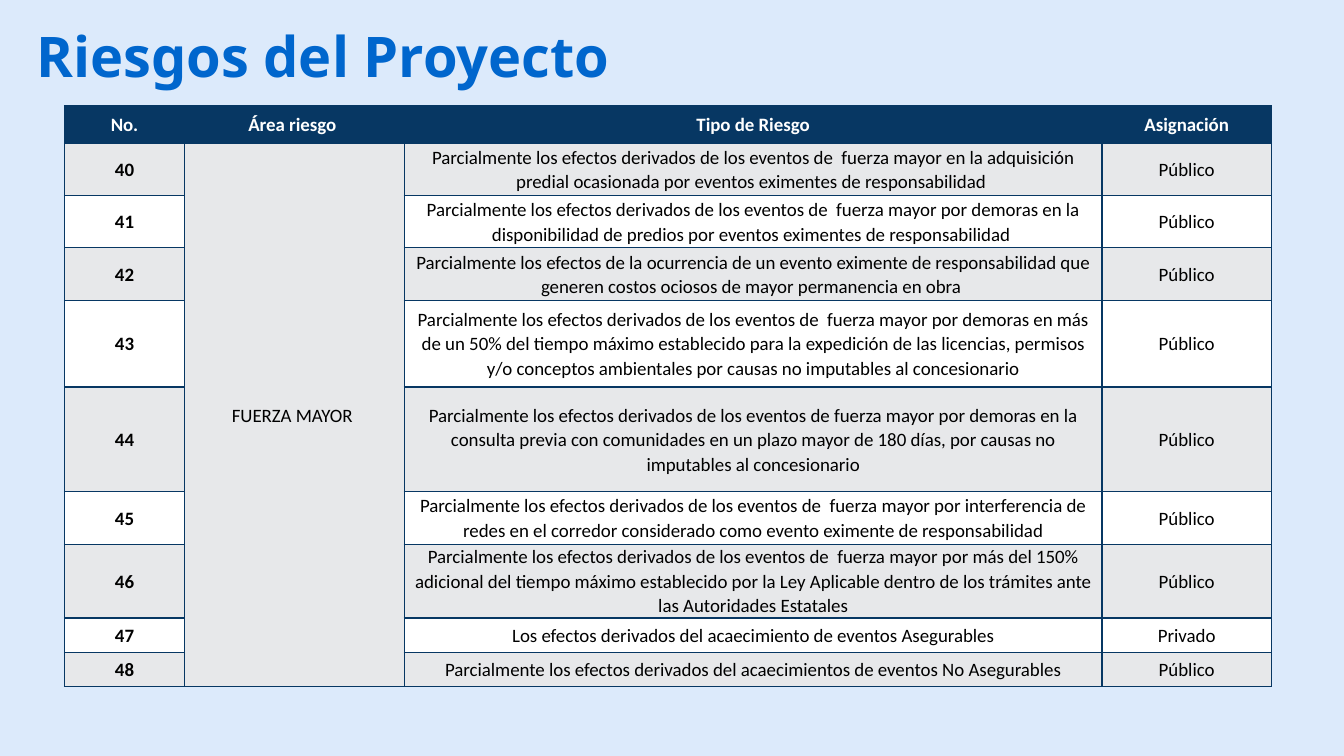
from lxml import etree
from pptx import Presentation
from pptx.dml.color import RGBColor
from pptx.enum.text import MSO_ANCHOR, PP_ALIGN
from pptx.oxml.ns import qn
from pptx.util import Inches, Pt

MIDDLE = MSO_ANCHOR.MIDDLE
LEFT, CENTER = PP_ALIGN.LEFT, PP_ALIGN.CENTER
TITLE_ONLY = 5

COLORS = {
    "back": "DCEAFB",
    "title": "0066CD",
    "navy": "073763",
    "gray": "E7E8EA",
    "white": "FFFFFF",
    "black": "000000",
}

WIDTHS = [1.19, 2.18, 6.92, 1.68]
HEIGHTS = [0.37, 0.52, 0.52, 0.52, 0.86, 1.04, 0.52, 0.69, 0.34, 0.34]
HEADS = ["No.", "Área riesgo ", "Tipo de Riesgo", "Asignación"]
AREA = "FUERZA MAYOR "
FIRST = 40
RISKS = [
    ("Parcialmente los efectos derivados de los eventos de  fuerza mayor en la adquisición "
     "predial ocasionada por eventos eximentes de responsabilidad ", "Público"),
    ("Parcialmente los efectos derivados de los eventos de  fuerza mayor por demoras en la "
     "disponibilidad de predios por eventos eximentes de responsabilidad ", "Público"),
    ("Parcialmente los efectos de la ocurrencia de un evento eximente de responsabilidad que "
     "generen costos ociosos de mayor permanencia en obra ", "Público"),
    ("Parcialmente los efectos derivados de los eventos de  fuerza mayor por demoras en más "
     "de un 50% del tiempo máximo establecido para la expedición de las licencias, permisos "
     "y/o conceptos ambientales por causas no imputables al concesionario", "Público"),
    ("Parcialmente los efectos derivados de los eventos de fuerza mayor por demoras en la "
     "consulta previa con comunidades en un plazo mayor de 180 días, por causas no "
     "imputables al concesionario", "Público"),
    ("Parcialmente los efectos derivados de los eventos de  fuerza mayor por interferencia de "
     "redes en el corredor considerado como evento eximente de responsabilidad", "Público"),
    ("Parcialmente los efectos derivados de los eventos de  fuerza mayor por más del 150% "
     "adicional del tiempo máximo establecido por la Ley Aplicable dentro de los trámites ante "
     "las Autoridades Estatales", "Público"),
    ("Los efectos derivados del acaecimiento de eventos Asegurables", "Privado"),
    ("Parcialmente los efectos derivados del acaecimientos de eventos No Asegurables", "Público"),
]


def rgb(name):
    return RGBColor.from_string(COLORS[name])


def set_font(para, face, size, color, bold):
    font = para.font
    font.name, font.size, font.bold = face, Pt(size), bold
    font.color.rgb = rgb(color)


def add_title(slide, text):
    title = slide.shapes.title
    title.left, title.top = Inches(0.26), Inches(0.12)
    title.width, title.height = Inches(10.48), Inches(0.93)
    frame = title.text_frame
    frame.text = text
    frame.word_wrap = True
    frame.vertical_anchor = MIDDLE
    para = frame.paragraphs[0]
    para.alignment, para.line_spacing = LEFT, 0.9
    set_font(para, "Noto Sans", 40, "title", True)


def add_edges(cell):
    """Draw a thin navy line on all four sides of the cell."""
    props = cell._tc.get_or_add_tcPr()
    for tag in ("a:lnL", "a:lnR", "a:lnT", "a:lnB"):
        line = etree.SubElement(props, qn(tag), w=str(Pt(1)))
        fill = etree.SubElement(line, qn("a:solidFill"))
        etree.SubElement(fill, qn("a:srgbClr"), val=COLORS["navy"])


def style_cell(cell, fill, color, bold):
    add_edges(cell)
    cell.fill.solid()
    cell.fill.fore_color.rgb = rgb(fill)
    cell.vertical_anchor = MIDDLE
    cell.margin_left = cell.margin_right = Inches(0.05)
    cell.margin_top = cell.margin_bottom = 0
    para = cell.text_frame.paragraphs[0]
    para.alignment, para.line_spacing, para.space_after = CENTER, 1.07, Pt(8)
    set_font(para, "Calibri", 13.5, color, bold)


def add_risks(slide):
    rows = [HEADS]
    for num, (risk, owner) in enumerate(RISKS, FIRST):
        rows.append([str(num), AREA if num == FIRST else "", risk, owner])
    table = slide.shapes.add_table(
        len(rows), len(HEADS), Inches(0.64), Inches(1.05),
        Inches(sum(WIDTHS)), Inches(sum(HEIGHTS))).table
    for col, width in zip(table.columns, WIDTHS):
        col.width = Inches(width)
    for row, height in zip(table.rows, HEIGHTS):
        row.height = Inches(height)
    for r, texts in enumerate(rows):
        for c, text in enumerate(texts):
            cell = table.cell(r, c)
            cell.text = text
            if r == 0:
                style_cell(cell, "navy", "white", True)
            else:
                fill = "gray" if r % 2 or c == 1 else "white"
                style_cell(cell, fill, "black", c == 0)
    table.cell(1, 1).merge(table.cell(len(RISKS), 1))


def main():
    prs = Presentation()
    prs.slide_width, prs.slide_height = Inches(13.33), Inches(7.5)
    slide = prs.slides.add_slide(prs.slide_layouts[TITLE_ONLY])
    back = slide.background.fill
    back.solid()
    back.fore_color.rgb = rgb("back")
    add_risks(slide)
    add_title(slide, "Riesgos del Proyecto")
    prs.save("out.pptx")


if __name__ == "__main__":
    main()
